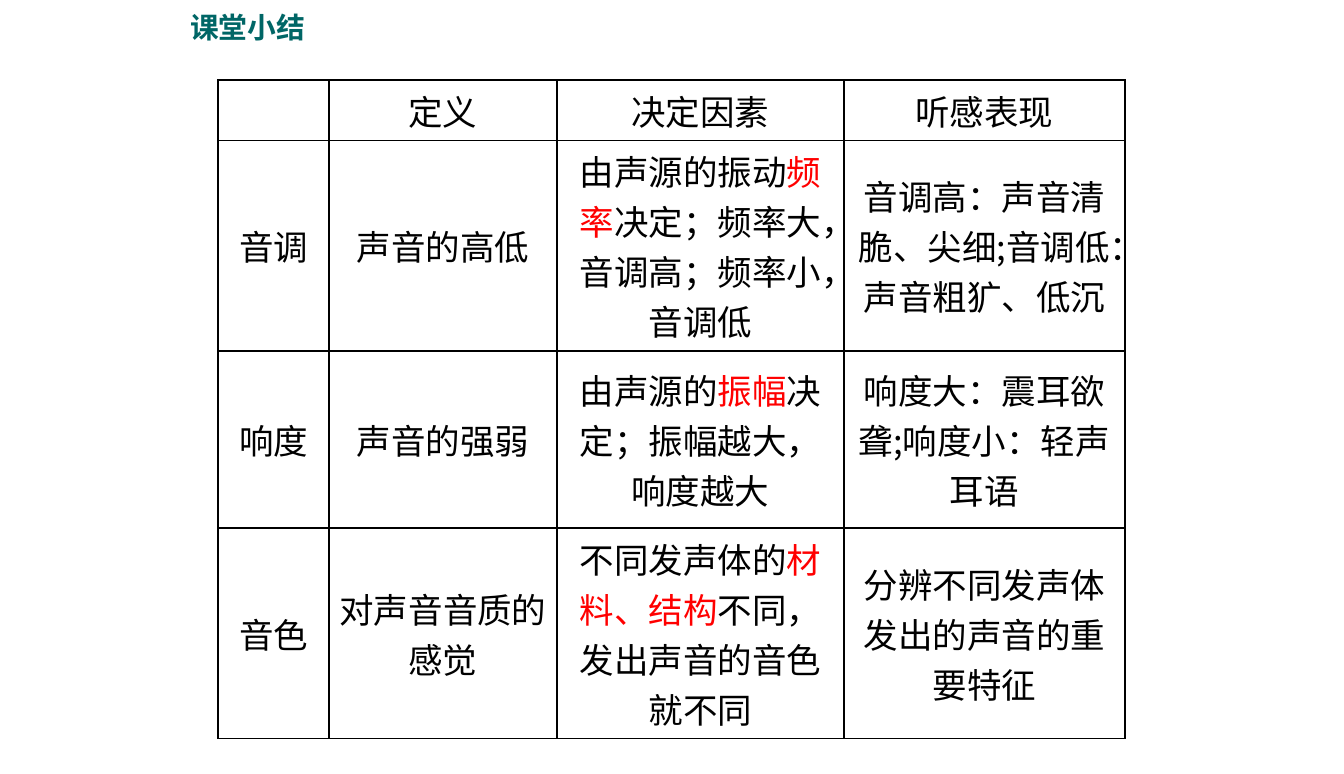
from lxml import etree
from pptx import Presentation
from pptx import util as u
from pptx.dml.color import RGBColor
from pptx.enum import lang, text
from pptx.oxml import ns

PX = 8835
BLACK = RGBColor(0, 0, 0)
RED = RGBColor(255, 0, 0)
TEAL = RGBColor(0, 0x66, 0x66)
CJK = "Noto Sans CJK SC"


def add_run(para, words, color, **style):
    run = para.add_run()
    run.text = words
    run.font.color.rgb = color
    style["language_id"] = lang.MSO_LANGUAGE_ID.SIMPLIFIED_CHINESE
    for key, val in style.items():
        setattr(run.font, key, val)
    etree.SubElement(run.font._element, ns.qn("a:ea"), typeface=CJK)


def add_edge(cell, side, width):
    line = etree.SubElement(cell._tc.get_or_add_tcPr(), ns.qn("a:" + side),
                            w=str(u.Pt(width)))
    fill = etree.SubElement(line, ns.qn("a:solidFill"))
    etree.SubElement(fill, ns.qn("a:srgbClr"), val=str(BLACK))


deck = Presentation()
deck.slide_width, deck.slide_height = 1344 * PX, 774 * PX
slide = deck.slides.add_slide(deck.slide_layouts[6])

# Summary table: words between bars are red
rows = [
    ["", "定义", "决定因素", "听感表现"],
    ["音调", "声音的高低", "由声源的振动|频率|决定；频率大，音调高；频率小，音调低",
     "音调高：声音清脆、尖细;音调低：声音粗犷、低沉"],
    ["响度", "声音的强弱", "由声源的|振幅|决定；振幅越大，响度越大",
     "响度大：震耳欲聋;响度小：轻声耳语"],
    ["音色", "对声音音质的感觉", "不同发声体的|材料、结构|不同，发出声音的音色就不同",
     "分辨不同发声体发出的声音的重要特征"],
]
wide = [111, 228, 287, 281]
high = [59, 190, 177, 203]
table = slide.shapes.add_table(len(high), len(wide), 218 * PX, 80 * PX,
                               sum(wide) * PX, sum(high) * PX).table
table.first_row = table.horz_banding = False
for col, width in zip(table.columns, wide):
    col.width = width * PX
for row, height in zip(table.rows, high):
    row.height = height * PX

for r, row in enumerate(rows):
    for c, words in enumerate(row):
        cell = table.cell(r, c)
        cell.vertical_anchor = text.MSO_ANCHOR.MIDDLE
        para = cell.text_frame.paragraphs[0]
        para.alignment = text.PP_ALIGN.CENTER
        para.font.size = u.Pt(24)
        if words:
            for i, part in enumerate(words.split("|")):
                add_run(para, part, RED if i % 2 else BLACK,
                        size=u.Pt(24), name=CJK)
        # Outer edges are heavier than inner ones
        outer = {"lnL": c == 0, "lnR": c == len(wide) - 1,
                 "lnT": r == 0, "lnB": r == len(high) - 1}
        for side, edge in outer.items():
            add_edge(cell, side, 1.5 if edge else 1)
        cell.fill.background()

# Title
frame = slide.shapes.add_textbox(180 * PX, 5 * PX, 143 * PX, 46 * PX).text_frame
frame.word_wrap = True
frame.auto_size = text.MSO_AUTO_SIZE.SHAPE_TO_FIT_TEXT
add_run(frame.paragraphs[0], "课堂小结", TEAL,
        size=u.Pt(20), name="Arial", bold=True)

deck.save("out.pptx")
